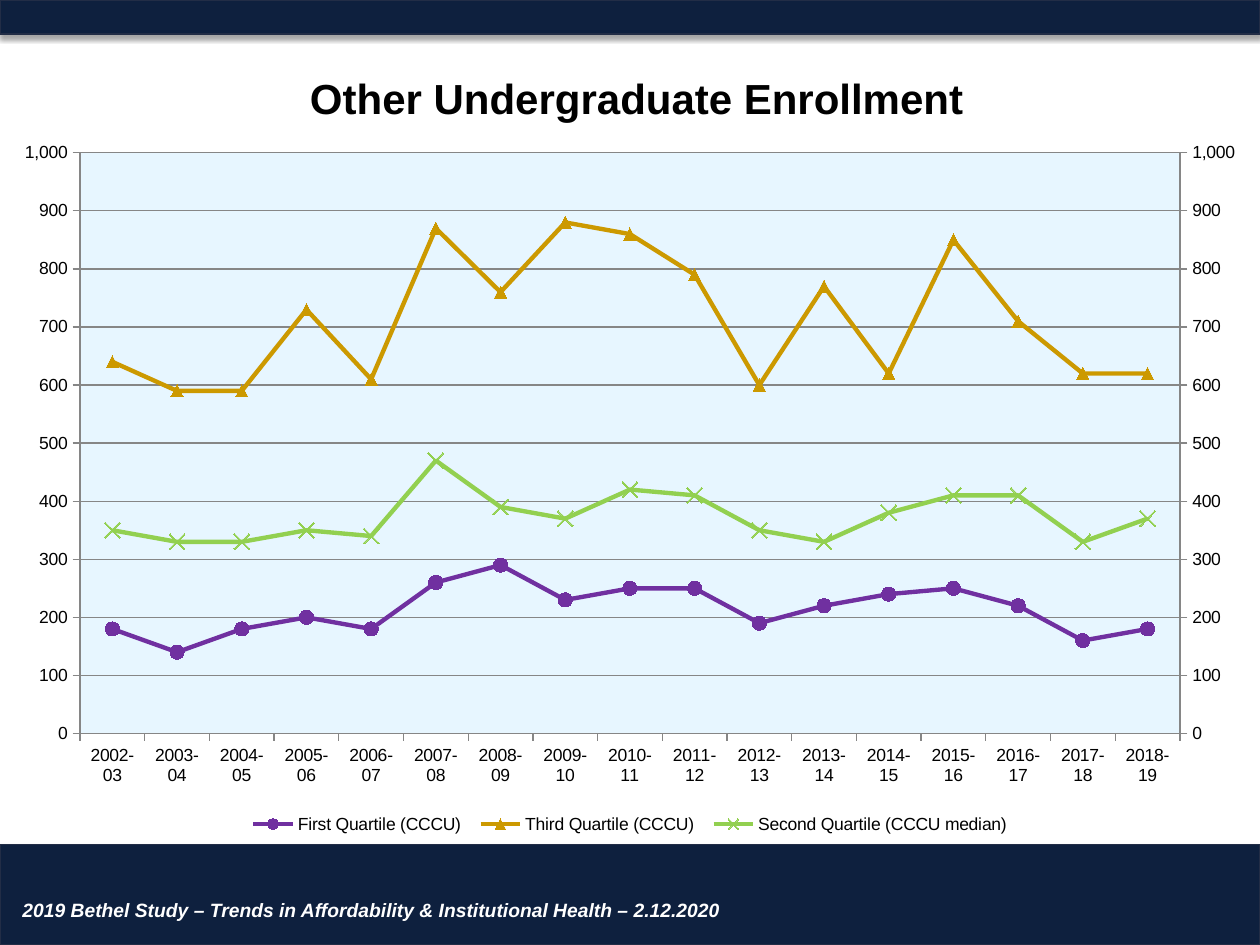
from copy import deepcopy

from lxml import etree
from pptx import Presentation
from pptx.chart.data import CategoryChartData
from pptx.dml.color import RGBColor
from pptx.enum.chart import XL_CHART_TYPE, XL_LEGEND_POSITION, XL_MARKER_STYLE, XL_TICK_MARK
from pptx.enum.shapes import MSO_SHAPE
from pptx.enum.text import MSO_ANCHOR
from pptx.oxml import parse_xml
from pptx.oxml.ns import nsdecls, qn
from pptx.util import Inches, Pt

CIRCLE, TRIANGLE, CROSS = XL_MARKER_STYLE.CIRCLE, XL_MARKER_STYLE.TRIANGLE, XL_MARKER_STYLE.X
OUTSIDE = XL_TICK_MARK.OUTSIDE
FONT = "Arial"
NAVY, NAVY_EDGE, WHITE, BLACK = "0E203E", "222D46", "FFFFFF", "000000"
PLOT_BLUE, AXIS_GRAY = "E7F6FF", "868686"

# Content
TITLE = "Other Undergraduate Enrollment"
FOOTER = "2019 Bethel Study – Trends in Affordability & Institutional Health – 2.12.2020"
YEARS = [f"{year}-{(year + 1) % 100:02d}" for year in range(2002, 2019)]
SERIES = [
    ("First Quartile (CCCU)", "7030A0", CIRCLE, 8,
     [180, 140, 180, 200, 180, 260, 290, 230, 250, 250, 190, 220, 240, 250, 220, 160, 180]),
    ("Third Quartile (CCCU)", "CC9900", TRIANGLE, 7,
     [640, 590, 590, 730, 610, 870, 760, 880, 860, 790, 600, 770, 620, 850, 710, 620, 620]),
    ("Second Quartile (CCCU median)", "92D050", CROSS, 9,
     [350, 330, 330, 350, 340, 470, 390, 370, 420, 410, 350, 330, 380, 410, 410, 330, 370]),
]
BARS = [(0, 0.27), (6.7, 0.8)]  # top, height


def rgb(value):
    return RGBColor.from_string(value)


def set_font(font, size, color, bold=False, italic=False):
    font.name, font.size, font.bold, font.italic = FONT, Pt(size), bold, italic
    font.color.rgb = rgb(color)


def add_bar(slide, top, height):
    bar = slide.shapes.add_shape(MSO_SHAPE.RECTANGLE, 0, Inches(top), Inches(10), Inches(height))
    bar.fill.solid()
    bar.fill.fore_color.rgb = rgb(NAVY)
    bar.line.color.rgb = rgb(NAVY_EDGE)
    bar.line.width = Pt(0.75)
    bar.shadow.inherit = False
    effects = bar.element.spPr.find(qn("a:effectLst"))
    effects.append(parse_xml(
        f'<a:outerShdw {nsdecls("a")} blurRad="{Pt(3.1)}" dist="{Pt(1.8)}" dir="5400000" rotWithShape="0">'
        f'<a:srgbClr val="{BLACK}"><a:alpha val="35000"/></a:srgbClr></a:outerShdw>'))


def place(element, before, **fractions):
    """Give a chart part a manual layout, in fractions of the chart."""
    for old in element.findall(qn("c:layout")):
        element.remove(old)
    layout = etree.Element(qn("c:layout"))
    manual = etree.SubElement(layout, qn("c:manualLayout"))
    if before is None:
        etree.SubElement(manual, qn("c:layoutTarget")).set("val", "inner")
    for side in ("xMode", "yMode"):
        etree.SubElement(manual, qn(f"c:{side}")).set("val", "edge")
    for name, value in fractions.items():
        etree.SubElement(manual, qn(f"c:{name}")).set("val", str(value))
    if before is None:
        element.insert(0, layout)
    else:
        element.find(qn(before)).addprevious(layout)


def add_right_axis(plot_area):
    """Move the last series to a second line plot with its own axes."""
    left_plot = plot_area.find(qn("c:lineChart"))
    right_plot = deepcopy(left_plot)
    left_plot.addnext(right_plot)
    left_plot.remove(left_plot.findall(qn("c:ser"))[-1])
    for series in right_plot.findall(qn("c:ser"))[:-1]:
        right_plot.remove(series)

    category_id, value_id = "50010", "50020"
    for axis_id, value in zip(right_plot.findall(qn("c:axId")), (category_id, value_id)):
        axis_id.set("val", value)
    left_values = plot_area.find(qn("c:valAx"))
    right_values = deepcopy(left_values)
    right_values.remove(right_values.find(qn("c:majorGridlines")))
    hidden_categories = deepcopy(plot_area.find(qn("c:catAx")))
    left_values.addnext(right_values)
    right_values.addnext(hidden_categories)
    settings = [
        (right_values, {"axId": value_id, "crossAx": category_id, "axPos": "r", "crosses": "max"}),
        (hidden_categories, {"axId": category_id, "crossAx": value_id, "delete": "1"}),
    ]
    for axis, values in settings:
        for name, value in values.items():
            axis.find(qn(f"c:{name}")).set("val", value)


def add_enrollment_chart(slide):
    data = CategoryChartData(number_format="#,##0")
    data.categories = YEARS
    for name, _, _, _, values in SERIES:
        data.add_series(name, values)
    chart = slide.shapes.add_chart(XL_CHART_TYPE.LINE_MARKERS, 0, Inches(0.25),
                                   Inches(10), Inches(6.42), data).chart
    set_font(chart.font, 10, BLACK)
    chart.plots[0].vary_by_categories = False

    # Title and legend
    title = chart.chart_title
    run = title.text_frame.paragraphs[0].add_run()
    run.text = TITLE
    set_font(run.font, 24, BLACK, bold=True)
    title.include_in_layout = False
    title_element = chart.element.find(".//" + qn("c:title"))
    place(title_element, "c:overlay", x=0.24, y=0.04)
    chart.has_legend = True
    chart.legend.position = XL_LEGEND_POSITION.BOTTOM
    chart.legend.include_in_layout = False
    legend = chart.element.find(".//" + qn("c:legend"))
    place(legend, "c:overlay", x=0.19, y=0.96, w=0.62, h=0.04)

    # Axes
    values_axis = chart.value_axis
    values_axis.minimum_scale, values_axis.maximum_scale, values_axis.major_unit = 0, 1000, 100
    values_axis.tick_labels.number_format = "#,##0"
    values_axis.tick_labels.number_format_is_linked = False
    values_axis.has_major_gridlines = True
    for axis in (values_axis, chart.category_axis):
        axis.major_tick_mark = OUTSIDE
    for line in (values_axis.major_gridlines.format.line, values_axis.format.line,
                 chart.category_axis.format.line):
        line.color.rgb = rgb(AXIS_GRAY)
        line.width = Pt(0.75)

    # Lines and markers
    for series, (_, color, style, size, _) in zip(chart.series, SERIES):
        series.smooth = False
        series.format.line.color.rgb = rgb(color)
        series.format.line.width = Pt(2.5)
        marker = series.marker
        marker.style, marker.size = style, size
        marker.format.line.color.rgb = rgb(color)
        if style == CROSS:
            marker.format.fill.background()
        else:
            marker.format.fill.solid()
            marker.format.fill.fore_color.rgb = rgb(color)

    # Plot area
    plot_area = chart.element.find(".//" + qn("c:plotArea"))
    add_right_axis(plot_area)
    place(plot_area, None, x=0.0635, y=0.15, w=0.873, h=0.718)
    plot_area.append(parse_xml(
        f'<c:spPr {nsdecls("c", "a")}><a:solidFill><a:srgbClr val="{PLOT_BLUE}"/></a:solidFill>'
        '<a:ln><a:noFill/></a:ln></c:spPr>'))


def add_footer(slide):
    box = slide.shapes.add_textbox(Inches(0.08), Inches(7.08), Inches(7.33), Inches(0.27))
    frame = box.text_frame
    frame.word_wrap = True
    frame.vertical_anchor = MSO_ANCHOR.TOP
    run = frame.paragraphs[0].add_run()
    run.text = FOOTER
    set_font(run.font, 11, WHITE, bold=True, italic=True)


def main():
    presentation = Presentation()
    presentation.slide_width, presentation.slide_height = Inches(10), Inches(7.5)
    slide = presentation.slides.add_slide(presentation.slide_layouts[6])
    for top, height in BARS:
        add_bar(slide, top, height)
    add_footer(slide)
    add_enrollment_chart(slide)
    presentation.save("out.pptx")


if __name__ == "__main__":
    main()
